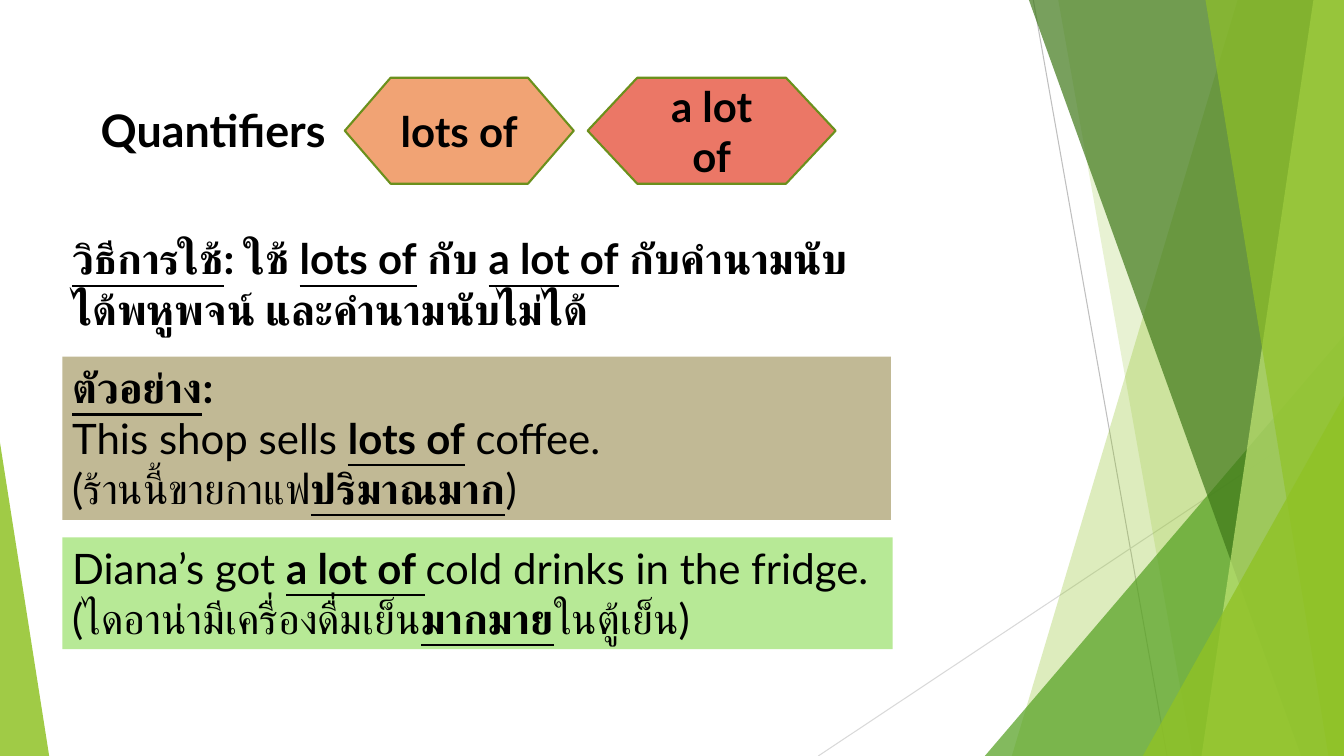
from pptx import Presentation
from pptx.dml.color import RGBColor
from pptx.enum.shapes import MSO_CONNECTOR, MSO_SHAPE
from pptx.enum.text import MSO_ANCHOR, MSO_AUTO_SIZE, PP_ALIGN
from pptx.oxml.ns import qn
from pptx.util import Cm, Pt
from lxml.etree import SubElement

FONT = "Lato"
BLACK = RGBColor(0x00, 0x00, 0x00)
LIME = RGBColor(0x90, 0xC2, 0x26)
GREEN = RGBColor(0x54, 0xA0, 0x21)
DARK = RGBColor(0x3F, 0x78, 0x19)
PALE = RGBColor(0xC0, 0xE4, 0x74)
EDGE = RGBColor(0x6B, 0x90, 0x1C)
GREY = RGBColor(0xBF, 0xBF, 0xBF)
SILVER = RGBColor(0xD9, 0xD9, 0xD9)
ORANGE = RGBColor(0xF1, 0xA3, 0x74)
CORAL = RGBColor(0xEB, 0x77, 0x66)
SAND = RGBColor(0xC1, 0xB9, 0x95)
MINT = RGBColor(0xB7, 0xE9, 0x96)

WIDE, HIGH = 33.87, 19.05
LEFT = 1.57

TITLE = [[("Quantifiers", "b")]]
USAGE = [[
    ("วิธีการใช้", "bu"), (": ใช้ ", "b"), ("lots of", "bu"), (" ", ""),
    ("กับ ", "b"), ("a lot of", "bu"), (" ", ""),
    ("กับคำนามนับได้พหูพจน์ และคำนามนับไม่ได้", "b"),
]]
SHOP = [
    [("ตัวอย่าง", "bu"), (":", "b")],
    [("This shop sells ", ""), ("lots of", "bu"), (" coffee.", "")],
    [("(ร้านนี้ขายกาแฟ", ""), ("ปริมาณมาก", "bu"), (")", "")],
]
FRIDGE = [
    [("Diana’s got ", ""), ("a lot of ", "bu"), ("cold drinks in the fridge.", "")],
    [("(ไดอาน่ามีเครื่องดื่มเย็น", ""), ("มากมาย", "bu"), ("ในตู้เย็น)", "")],
]
BOXES = [
    (SHOP, (LEFT, 8.99, 20.88, 4.11), SAND),
    (FRIDGE, (LEFT, 13.54, 20.93, 2.82), MINT),
]
TERMS = [
    ("lots of", (8.69, 1.96, 5.77, 2.67), ORANGE),
    ("a lot of", (14.81, 1.96, 6.25, 2.67), CORAL),
]
LINES = [
    ((26.04, 0), (29.41, HIGH), GREY),
    ((WIDE, 10.24), (20.62, HIGH), SILVER),
]
BANDS = [
    ("band", (31.19, 25.5), LIME, 30),
    ("band", (26.67, 30.05), LIME, 20),
    ("wedge", (24.82, 8.46, 9.05, 10.59, 1), GREEN, 72),
    ("band", (25.93, 32.79), DARK, 70),
    ("band", (33.1, 30.28), PALE, 70),
    ("band", (30.38, 33.48), LIME, 65),
    ("wedge", (28.8, 9.98, 5.07, 9.07, 1), LIME, 80),
    ("wedge", (0, 11.15, 1.24, 7.9, 0), LIME, 85),
]


def paint(shape, color, alpha=100):
    shape.shadow.inherit = False
    shape.line.fill.background()
    shape.fill.solid()
    shape.fill.fore_color.rgb = color
    if alpha < 100:
        tone = shape.fill._xPr.find(".//" + qn("a:srgbClr"))
        SubElement(tone, qn("a:alpha")).set("val", str(alpha * 1000))


def place(shape, box):
    shape.left, shape.top, shape.width, shape.height = map(Cm, box)


def write(shape, rows, size=30, align=PP_ALIGN.LEFT, anchor=MSO_ANCHOR.TOP):
    frame = shape.text_frame
    frame.word_wrap = True
    frame.auto_size = MSO_AUTO_SIZE.NONE
    frame.vertical_anchor = anchor
    for i, row in enumerate(rows):
        para = frame.add_paragraph() if i else frame.paragraphs[0]
        para.alignment = align
        para.space_before = Pt(0)
        for text, style in row:
            run = para.add_run()
            run.text = text
            font = run.font
            font.name, font.size = FONT, Pt(size)
            font.bold, font.underline = "b" in style, "u" in style
            font.color.rgb = BLACK
            SubElement(font._element, qn("a:cs")).set("typeface", FONT)


def draw_back(shapes):
    for start, end, color in LINES:
        line = shapes.add_connector(
            MSO_CONNECTOR.STRAIGHT, *map(Cm, start + end))
        line.line.color.rgb = color
        line.line.width = Pt(0.75)
        SubElement(line._element.spPr, qn("a:effectLst"))
    for kind, data, color, alpha in BANDS:
        if kind == "band":
            top, base = data
            form = shapes.build_freeform(Cm(top), 0)
            ends = [(WIDE, 0), (WIDE, HIGH), (base, HIGH)]
            form.add_line_segments([(Cm(x), Cm(y)) for x, y in ends])
            shape = form.convert_to_shape()
        else:
            shape = shapes.add_shape(
                MSO_SHAPE.ISOSCELES_TRIANGLE, *map(Cm, data[:4]))
            shape.adjustments[0] = data[4]
        paint(shape, color, alpha)


def main():
    deck = Presentation()
    deck.slide_width, deck.slide_height = Cm(WIDE), Cm(HIGH)
    slide = deck.slides.add_slide(deck.slide_layouts[1])
    shapes = slide.shapes
    draw_back(shapes)

    title, body = shapes.title, slide.placeholders[1]
    place(title, (1.35, 2.46, 8.05, 1.63))
    write(title, TITLE, 32, PP_ALIGN.CENTER)
    place(body, (LEFT, 5.74, 20.12, 2.82))
    write(body, USAGE)
    props = body.text_frame.paragraphs[0]._p.get_or_add_pPr()
    props.set("marL", "0")
    props.set("indent", "0")
    SubElement(props, qn("a:buNone"))

    for rows, box, color in BOXES:
        shape = shapes.add_shape(MSO_SHAPE.RECTANGLE, *map(Cm, box))
        paint(shape, color)
        write(shape, rows)
    for term, box, color in TERMS:
        shape = shapes.add_shape(MSO_SHAPE.FLOWCHART_PREPARATION, *map(Cm, box))
        paint(shape, color)
        shape.line.color.rgb = EDGE
        shape.line.width = Pt(1.5)
        write(shape, [[(term, "b")]], 30, PP_ALIGN.CENTER, MSO_ANCHOR.MIDDLE)

    deck.save("out.pptx")


if __name__ == "__main__":
    main()
